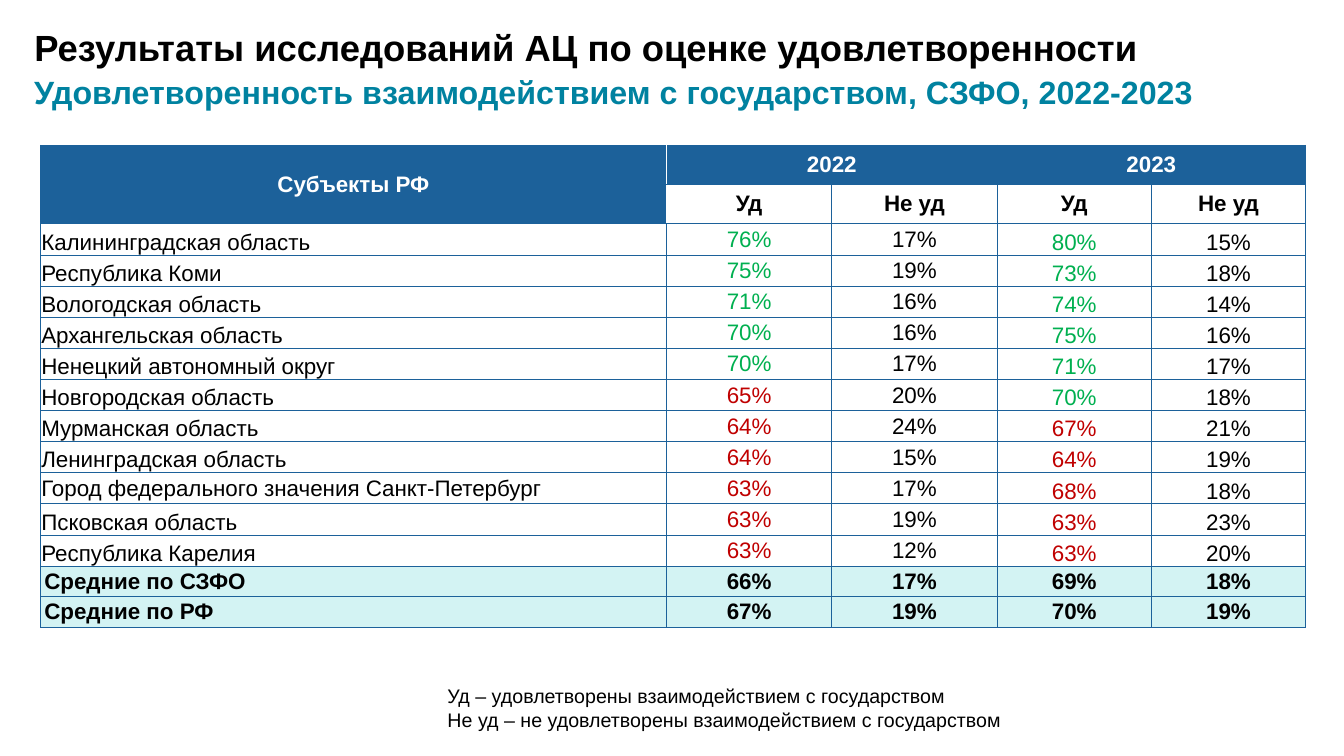
from typing import NamedTuple

from lxml.etree import SubElement
from pptx import Presentation
from pptx.dml.color import RGBColor
from pptx.enum.text import MSO_ANCHOR as Anchor, MSO_AUTO_SIZE as AutoSize, PP_ALIGN as Align
from pptx.oxml.ns import qn
from pptx.util import Inches, Pt

BLACK = RGBColor(0x00, 0x00, 0x00)
WHITE = RGBColor(0xFF, 0xFF, 0xFF)
BLUE = RGBColor(0x1C, 0x61, 0x9A)
TEAL = RGBColor(0x00, 0x82, 0xA0)
MINT = RGBColor(0xD3, 0xF3, 0xF3)
GREEN = RGBColor(0x00, 0xB0, 0x50)
RED = RGBColor(0xC0, 0x00, 0x00)

SLIDE_WIDTH, SLIDE_HEIGHT = Inches(13.33), Inches(7.5)
GOOD_SHARE = 70
COLUMN_PERCENTS = [46.59, 12.3, 12.3, 11.48, 11.48]
HEADER_PERCENT, REGION_PERCENT, AVERAGE_PERCENT = 5.2, 4.12, 4.07


class Area(NamedTuple):
    """A rectangle in percent of the slide's width and height."""
    left: float
    top: float
    width: float
    height: float


class Scores(NamedTuple):
    """Satisfied and dissatisfied percentages of one row in both years."""
    name: str
    values: tuple[int, int, int, int]
    name_anchor: Anchor = Anchor.BOTTOM


TITLE_AREA = Area(1.8, 3.33, 83.72, 6.53)
SUBTITLE_AREA = Area(1.8, 9.47, 96.47, 6)
NOTES_AREA = Area(32.56, 89.87, 42.99, 7.6)
TABLE_LEFT, TABLE_TOP = 3, 19.2

REGIONS = [
    Scores("Калининградская область", (76, 17, 80, 15)),
    Scores("Республика Коми", (75, 19, 73, 18)),
    Scores("Вологодская область", (71, 16, 74, 14)),
    Scores("Архангельская область", (70, 16, 75, 16)),
    Scores("Ненецкий автономный округ", (70, 17, 71, 17)),
    Scores("Новгородская область", (65, 20, 70, 18)),
    Scores("Мурманская область", (64, 24, 67, 21)),
    Scores("Ленинградская область", (64, 15, 64, 19)),
    Scores("Город федерального значения Санкт-Петербург", (63, 17, 68, 18), Anchor.MIDDLE),
    Scores("Псковская область", (63, 19, 63, 23)),
    Scores("Республика Карелия", (63, 12, 63, 20)),
]
AVERAGES = [
    Scores("Средние по СЗФО", (66, 17, 69, 18)),
    Scores("Средние по РФ", (67, 19, 70, 19)),
]


def across(percent: float) -> int:
    """Turn a percentage of the slide's width into a length."""
    return round(SLIDE_WIDTH * percent / 100)


def down(percent: float) -> int:
    """Turn a percentage of the slide's height into a length."""
    return round(SLIDE_HEIGHT * percent / 100)


def place(area: Area) -> tuple[int, int, int, int]:
    """Turn an area into left, top, width and height lengths."""
    return across(area.left), down(area.top), across(area.width), down(area.height)


def write(frame, text: str, *, size: float = 16, color: RGBColor = BLACK, bold: bool = False,
          align: Align = Align.LEFT, spacing: float = 1.0) -> None:
    """Fill a text frame with one formatted paragraph per line of text."""
    for number, line in enumerate(text.split("\n")):
        para = frame.add_paragraph() if number else frame.paragraphs[0]
        para.alignment, para.line_spacing = align, spacing
        para.space_before = Pt(0)
        span = para.add_run()
        span.text = line
        span.font.name, span.font.size = "Arial", Pt(size)
        span.font.bold, span.font.color.rgb = bold, color


def fit(box, wrap: bool) -> None:
    """Give a text box its wrapping, anchor and growth."""
    frame = box.text_frame
    frame.vertical_anchor = Anchor.TOP
    frame.word_wrap, frame.auto_size = wrap, AutoSize.SHAPE_TO_FIT_TEXT


def add_text(page, area: Area, text: str, *, wrap: bool, **style) -> None:
    """Add a formatted text box to the page."""
    box = page.shapes.add_textbox(*place(area))
    fit(box, wrap)
    write(box.text_frame, text, **style)


def dress(cell, *, fill: RGBColor | None = None, left: RGBColor = BLUE, right: RGBColor = BLUE,
          anchor: Anchor = Anchor.MIDDLE, inset: float = 0, indent: float = 0) -> None:
    """Set the borders, fill, anchor and margins of a cell."""
    cell.margin_left = Inches(inset + indent)
    cell.margin_right = cell.margin_top = Inches(inset)
    cell.margin_bottom = 0
    cell.vertical_anchor = anchor
    properties = cell._tc.get_or_add_tcPr()
    for side, color in (("L", left), ("R", right), ("T", BLUE), ("B", BLUE)):
        line = SubElement(properties, qn(f"a:ln{side}"), w=str(Pt(0.5)))
        SubElement(SubElement(line, qn("a:solidFill")), qn("a:srgbClr"), val=str(color))
    if fill is None:
        cell.fill.background()
    else:
        cell.fill.solid()
        cell.fill.fore_color.rgb = fill


def fill_header(table) -> None:
    """Write the two header rows with their merged cells."""
    for row in range(2):
        for column in range(5):
            dress(table.cell(row, column),
                  fill=BLUE if row == 0 or column == 0 else None,
                  left=WHITE if column == 1 else BLUE,
                  right=WHITE if column == 0 else BLUE)
    table.cell(0, 0).merge(table.cell(1, 0))
    write(table.cell(0, 0).text_frame, "Субъекты РФ", color=WHITE, bold=True, align=Align.CENTER)
    for column, year in ((1, "2022"), (3, "2023")):
        table.cell(0, column).merge(table.cell(0, column + 1))
        write(table.cell(0, column).text_frame, year, color=WHITE, bold=True, align=Align.CENTER)
        for offset, label in enumerate(("Уд", "Не уд")):
            write(table.cell(1, column + offset).text_frame, label, bold=True, align=Align.CENTER)


def fill_region(table, row: int, region: Scores) -> None:
    """Write one region, with satisfied shares coloured by level."""
    dress(table.cell(row, 0), anchor=region.name_anchor, inset=0.01)
    write(table.cell(row, 0).text_frame, region.name)
    for column, value in enumerate(region.values, 1):
        level = GREEN if value >= GOOD_SHARE else RED
        cell = table.cell(row, column)
        dress(cell, anchor=Anchor.MIDDLE if column < 3 else Anchor.BOTTOM, inset=0.01)
        write(cell.text_frame, f"{value}%", color=level if column % 2 else BLACK, align=Align.CENTER)


def fill_average(table, row: int, average: Scores) -> None:
    """Write one bold, tinted row of averages."""
    dress(table.cell(row, 0), fill=MINT, indent=0.04)
    write(table.cell(row, 0).text_frame, average.name, bold=True)
    for column, value in enumerate(average.values, 1):
        dress(table.cell(row, column), fill=MINT)
        write(table.cell(row, column).text_frame, f"{value}%", bold=True, align=Align.CENTER)


def add_scores_table(page) -> None:
    """Add the table of regions and averages."""
    row_percents = ([HEADER_PERCENT] * 2 + [REGION_PERCENT] * len(REGIONS)
                    + [AVERAGE_PERCENT] * len(AVERAGES))
    area = Area(TABLE_LEFT, TABLE_TOP, sum(COLUMN_PERCENTS), sum(row_percents))
    table = page.shapes.add_table(len(row_percents), len(COLUMN_PERCENTS), *place(area)).table
    table.first_row = table.horz_banding = False
    for column, percent in zip(table.columns, COLUMN_PERCENTS):
        column.width = across(percent)
    for row, percent in zip(table.rows, row_percents):
        row.height = down(percent)
    fill_header(table)
    for row, region in enumerate(REGIONS, 2):
        fill_region(table, row, region)
    for row, average in enumerate(AVERAGES, 2 + len(REGIONS)):
        fill_average(table, row, average)


def main() -> None:
    """Build the slide and save the deck."""
    deck = Presentation()
    deck.slide_width, deck.slide_height = SLIDE_WIDTH, SLIDE_HEIGHT
    page = deck.slides.add_slide(deck.slide_layouts[5])
    title = page.shapes.title
    title.left, title.top, title.width, title.height = place(TITLE_AREA)
    fit(title, wrap=False)
    write(title.text_frame, "Результаты исследований АЦ по оценке удовлетворенности",
          size=26, bold=True, spacing=0.9)
    add_text(page, SUBTITLE_AREA, "Удовлетворенность взаимодействием с государством, СЗФО, 2022-2023",
             wrap=True, size=23, color=TEAL, bold=True, spacing=0.9)
    add_scores_table(page)
    add_text(page, NOTES_AREA, "Уд – удовлетворены взаимодействием с государством\n"
             "Не уд – не удовлетворены взаимодействием с государством", wrap=False, size=14)
    deck.save("out.pptx")


if __name__ == "__main__":
    main()
